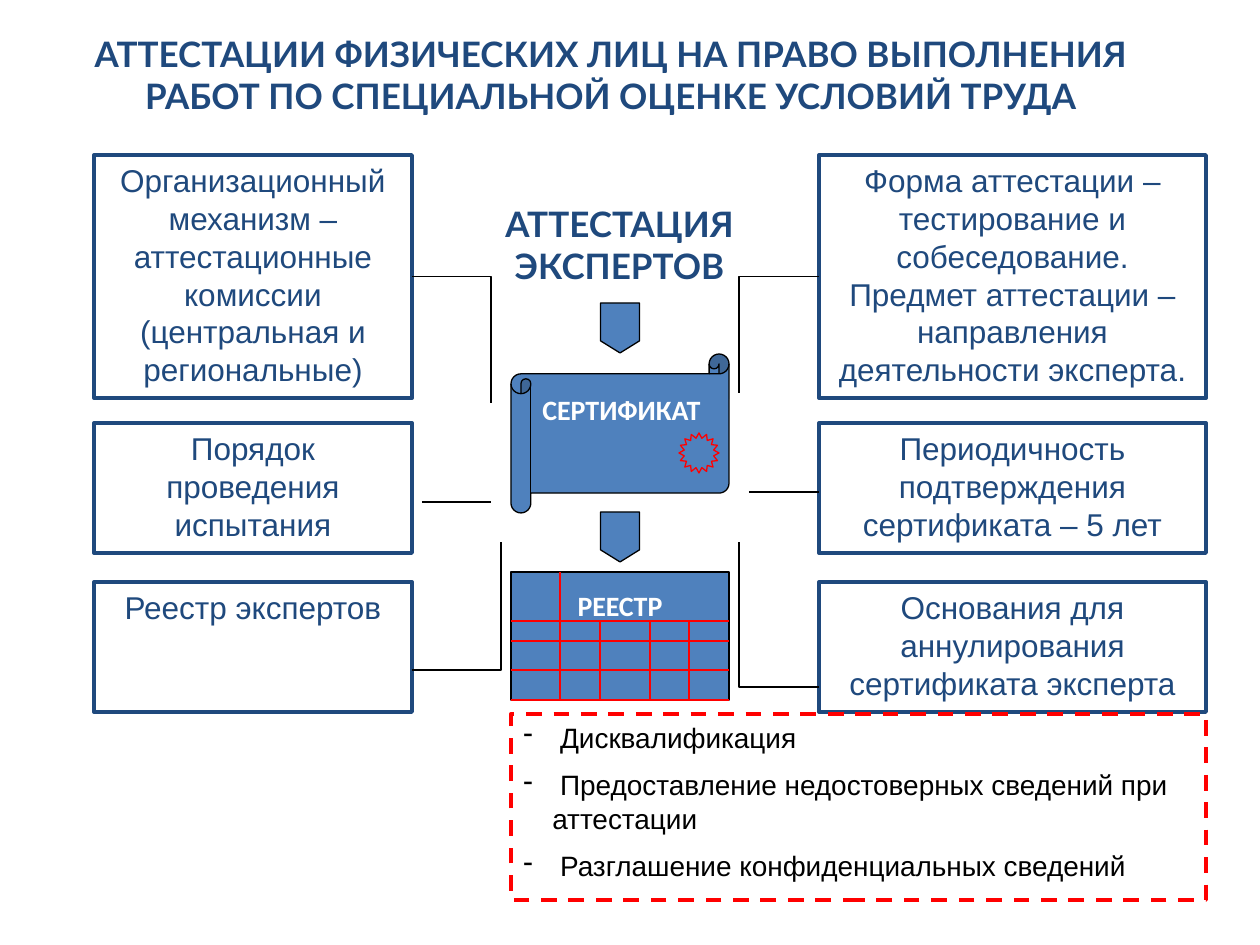
from dataclasses import dataclass

from lxml.etree import SubElement
from pptx import Presentation
from pptx.dml.color import RGBColor
from pptx.enum.dml import MSO_LINE
from pptx.enum.shapes import MSO_CONNECTOR, MSO_SHAPE
from pptx.enum.text import MSO_ANCHOR, PP_ALIGN
from pptx.oxml.ns import qn
from pptx.util import Pt


@dataclass(frozen=True)
class Theme:
    navy: str = "1F497D"
    blue: str = "4F81BD"
    red: str = "FF0000"
    black: str = "000000"
    white: str = "FFFFFF"
    head_font: str = "Lato"
    body_font: str = "Arial"
    label_font: str = "Calibri"
    head_size: int = 20
    body_size: int = 18
    small_size: int = 16
    thin: float = 0.75
    thick: float = 2.25


T = Theme()
LEFT, RIGHT = 1, 3  # connection sites of a rectangle


def px(n):
    return round(n * 914400 / 126)


def color(value):
    return RGBColor.from_string(value)


def write(p, text, font, size, tint, bold=False, align=PP_ALIGN.CENTER):
    p.alignment = align
    r = p.add_run()
    r.text = text
    r.font.name, r.font.size, r.font.bold = font, Pt(size), bold
    r.font.color.rgb = color(tint)


def add_shape(slide, kind, box, line, fill=None, width=T.thin):
    sp = slide.shapes.add_shape(kind, *map(px, box))
    sp.shadow.inherit = False
    if fill:
        sp.fill.solid()
        sp.fill.fore_color.rgb = color(fill)
    else:
        sp.fill.background()
    sp.line.color.rgb = color(line)
    sp.line.width = Pt(width)
    return sp


def add_line(slide, x1, y1, x2, y2, tint=T.black, elbow=False):
    """Straight line, or an elbow that runs across first and then up or down."""
    kind = MSO_CONNECTOR.ELBOW if elbow else MSO_CONNECTOR.STRAIGHT
    c = slide.shapes.add_connector(kind, *map(px, (x1, y1, x2, y2)))
    c.line.color.rgb = color(tint)
    c.line.width = Pt(T.thin)
    sp_pr = c._element.spPr
    SubElement(sp_pr, qn("a:effectLst"))
    if elbow:
        sp_pr.find(qn("a:prstGeom")).set("prst", "bentConnector2")
    return c


def add_label(slide, box, text, font, size, tint, align=PP_ALIGN.CENTER):
    tf = slide.shapes.add_textbox(*map(px, box)).text_frame
    tf.word_wrap = True
    tf.vertical_anchor = MSO_ANCHOR.MIDDLE
    write(tf.paragraphs[0], text, font, size, tint, True, align)


def add_title(slide, box, text):
    title = slide.shapes.title
    title.left, title.top, title.width, title.height = map(px, box)
    tf = title.text_frame
    tf.vertical_anchor = MSO_ANCHOR.MIDDLE
    tf.margin_bottom = px(26)
    write(tf.paragraphs[0], text, T.head_font, T.head_size, T.navy, True)


def add_column(slide, x, width, texts):
    """Stack of three outlined boxes; returns them from top to bottom."""
    boxes = []
    for (y, height), text in zip(((155, 243), (423, 130), (582, 130)), texts):
        sp = add_shape(slide, MSO_SHAPE.RECTANGLE, (x, y, width, height),
                       T.navy, width=T.thick)
        tf = sp.text_frame
        tf.word_wrap = True
        tf.vertical_anchor = MSO_ANCHOR.TOP
        write(tf.paragraphs[0], text, T.body_font, T.body_size, T.navy)
        boxes.append(sp)
    return boxes


def add_arrow(slide, cx, cy):
    length, breadth = 50, 39
    sp = add_shape(slide, MSO_SHAPE.PENTAGON,
                   (cx - length / 2, cy - breadth / 2, length, breadth),
                   T.black, T.blue)
    sp.adjustments[0] = 0.31
    sp.rotation = 90


def add_certificate(slide, x, y, w, h):
    sp = add_shape(slide, MSO_SHAPE.HORIZONTAL_SCROLL, (x, y, w, h), T.black, T.blue)
    sp.adjustments[0] = 0.125
    add_label(slide, (x + 19, y + 32, w, 47), "СЕРТИФИКАТ", T.label_font,
              T.small_size, T.white, PP_ALIGN.LEFT)
    add_shape(slide, MSO_SHAPE.STAR_16_POINT, (x + 168, y + 79, 40, 40), T.red, T.blue)


def add_register(slide, x, y, w, h):
    """Ruled sheet: a header band above a grid."""
    add_shape(slide, MSO_SHAPE.RECTANGLE, (x, y, w, h), T.black, T.blue)
    add_label(slide, (x, y + 10, w, 47), "РЕЕСТР", T.label_font, T.small_size, T.white)
    header = 49
    for dy in (header, 69, 98, h):
        add_line(slide, x, y + dy, x + w, y + dy, T.red)
    for dx, top in ((49, 0), (89, header), (139, header), (178, header)):
        add_line(slide, x + dx, y + top, x + dx, y + h, T.red)


def add_grounds(slide, box, items):
    """Dashed box with a list marked by hyphens."""
    sp = add_shape(slide, MSO_SHAPE.RECTANGLE, box, T.red, width=T.thick)
    sp.line.dash_style = MSO_LINE.DASH
    tf = sp.text_frame
    tf.word_wrap = True
    tf.vertical_anchor = MSO_ANCHOR.TOP
    for i, item in enumerate(items):
        p = tf.add_paragraph() if i else tf.paragraphs[0]
        write(p, item, T.body_font, T.small_size, T.black, align=PP_ALIGN.LEFT)
        p.space_before = Pt(8 if i else 0)
        p_pr = p._p.get_or_add_pPr()
        p_pr.set("marL", str(px(29)))
        p_pr.set("indent", str(-px(29)))
        SubElement(p_pr, qn("a:buChar")).set("char", "-")


def add_links(slide, left_box, right_box):
    """Lines from the side columns to the centre."""
    add_line(slide, 412, 276, 491, 403, elbow=True).begin_connect(left_box, RIGHT)
    add_line(slide, 819, 276, 739, 393, elbow=True).begin_connect(right_box, LEFT)
    add_line(slide, 412, 670, 501, 542, elbow=True)
    add_line(slide, 819, 687, 739, 542, elbow=True)
    add_line(slide, 422, 502, 491, 502)
    add_line(slide, 749, 492, 819, 492)


def main():
    prs = Presentation()
    prs.slide_width, prs.slide_height = px(1260), px(945)
    slide = prs.slides.add_slide(prs.slide_layouts[5])

    add_title(slide, (44, 26, 1134, 117),
              "АТТЕСТАЦИИ ФИЗИЧЕСКИХ ЛИЦ НА ПРАВО ВЫПОЛНЕНИЯ "
              "РАБОТ ПО СПЕЦИАЛЬНОЙ ОЦЕНКЕ УСЛОВИЙ ТРУДА")
    left = add_column(slide, 94, 318, (
        "Организационный механизм – аттестационные комиссии "
        "(центральная и региональные)",
        "Порядок проведения испытания",
        "Реестр экспертов"))
    right = add_column(slide, 819, 387, (
        "Форма аттестации – тестирование и собеседование. "
        "Предмет аттестации – направления деятельности эксперта.",
        "Периодичность подтверждения сертификата – 5 лет",
        "Основания для аннулирования сертификата эксперта"))
    add_links(slide, left[0], right[0])

    add_label(slide, (471, 185, 297, 118), "АТТЕСТАЦИЯ ЭКСПЕРТОВ",
              T.head_font, T.head_size, T.navy)
    add_arrow(slide, 620, 328)
    add_certificate(slide, 511, 354, 218, 159)
    add_arrow(slide, 620, 537)
    add_register(slide, 511, 572, 218, 128)
    add_grounds(slide, (511, 714, 695, 186), (
        " Дисквалификация",
        " Предоставление недостоверных сведений при аттестации",
        " Разглашение конфиденциальных сведений"))
    prs.save("out.pptx")


if __name__ == "__main__":
    main()
